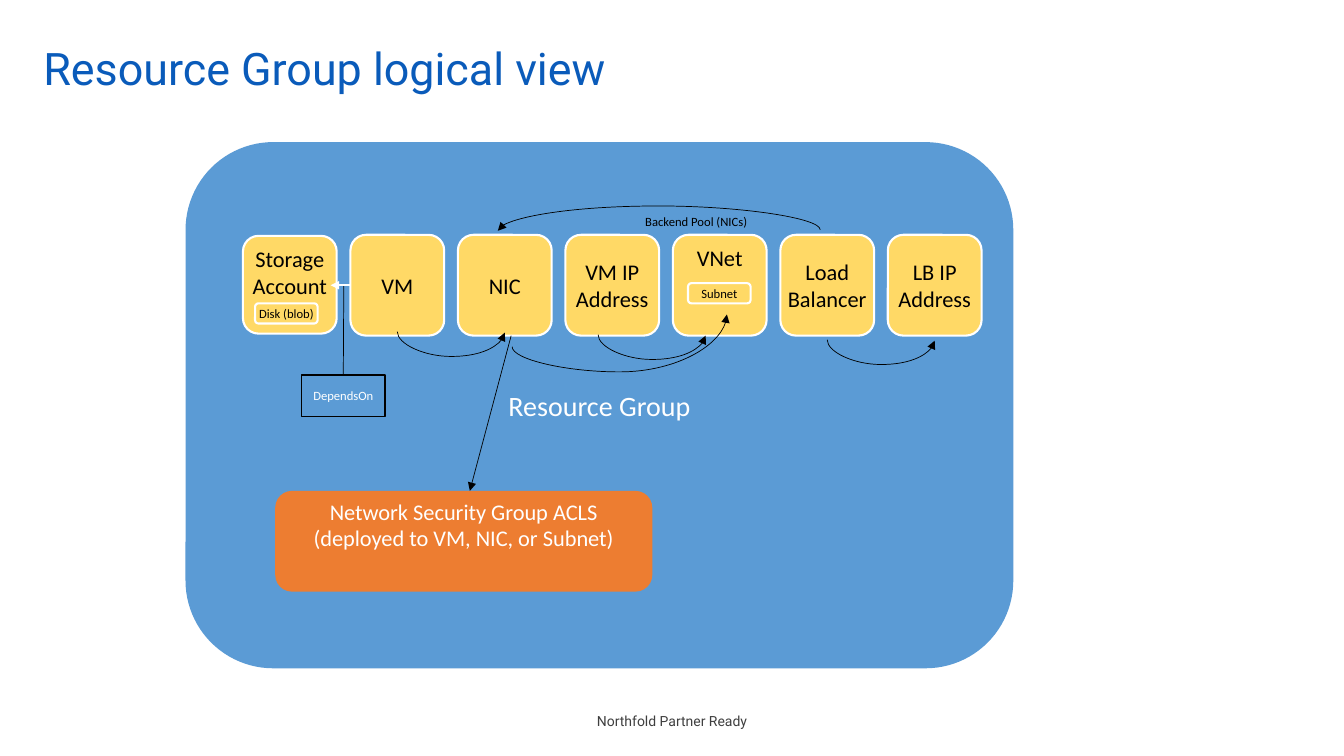
"""Build a slide that shows the resources of a resource group and their links."""
from lxml import etree
from pptx import Presentation
from pptx import util as u
from pptx.dml import color
from pptx.enum import shapes, text
from pptx.oxml import ns

WIDTH, HEIGHT = 13.33, 7.5
CARD_LEFT, CARD_TOP, CARD_PITCH = 2.41, 2.33, 1.066
CARD_WIDTH, CARD_HEIGHT = 0.93, 1.0
CARD_BOTTOM = CARD_TOP + CARD_HEIGHT
CARD_MIDDLE = CARD_TOP + CARD_HEIGHT / 2
BEND = 0.25
CARDS = ["Storage Account", "VM", "NIC", "VM IP Address", "VNet",
         "Load Balancer", "LB IP Address"]
STORAGE, VM, NIC, VM_IP, VNET, BALANCER, LB_IP = range(len(CARDS))
BLUE, YELLOW, ORANGE = "5B9BD5", "FFD966", "ED7D31"
WHITE, BLACK = "FFFFFF", "000000"


def rgb(value):
    """Turn a hex string into a colour."""
    return color.RGBColor.from_string(value)


def column(index):
    """Give the left edge of a card column."""
    return CARD_LEFT + index * CARD_PITCH


def center(index):
    """Give the horizontal middle of a card column."""
    return column(index) + CARD_WIDTH / 2


def write(shape, lines, size, ink, font="Calibri", insets=(0, 0.05, 0, 0.05),
          align=text.PP_ALIGN.CENTER, anchor=text.MSO_ANCHOR.MIDDLE, spacing=None):
    """Fill a shape with lines of text in one style."""
    frame = shape.text_frame
    frame.text = "\n".join(lines)
    frame.word_wrap = True
    frame.auto_size = text.MSO_AUTO_SIZE.NONE
    frame.vertical_anchor = anchor
    frame.margin_left, frame.margin_top, frame.margin_right, frame.margin_bottom = map(
        u.Inches, insets)
    for paragraph in frame.paragraphs:
        paragraph.alignment = align
        paragraph.line_spacing = spacing
        paragraph.font.size = u.Pt(size)
        paragraph.font.name = font
        paragraph.font.color.rgb = rgb(ink)


def add_box(slide, place, lines, size, fill, ink, border=None, weight=1.5,
            kind=shapes.MSO_SHAPE.ROUNDED_RECTANGLE, **style):
    """Add a filled shape with text."""
    shape = slide.shapes.add_shape(kind, *map(u.Inches, place))
    shape.shadow.inherit = False
    shape.fill.solid()
    shape.fill.fore_color.rgb = rgb(fill)
    if border:
        shape.line.color.rgb = rgb(border)
        shape.line.width = u.Pt(weight)
    else:
        shape.line.fill.background()
    write(shape, lines, size, ink, **style)
    return shape


def add_card(slide, index, anchor=text.MSO_ANCHOR.MIDDLE):
    """Add the card of one resource."""
    place = (column(index), CARD_TOP, CARD_WIDTH, CARD_HEIGHT)
    return add_box(slide, place, [CARDS[index]], 16, YELLOW, BLACK, WHITE, anchor=anchor)


def add_tag(slide, left, top, label):
    """Add a small label inside a card."""
    add_box(slide, (left, top, 0.62, 0.2), [label], 9, YELLOW, BLACK, WHITE)


def add_label(slide, place, label, size, ink, **style):
    """Add a text box."""
    write(slide.shapes.add_textbox(*map(u.Inches, place)), [label], size, ink, **style)


def add_line(slide, start, end, ink=BLACK, weight=0.5, arrow=None,
             kind=shapes.MSO_CONNECTOR.STRAIGHT):
    """Add a connector, with an arrow at its head or tail if asked."""
    connector = slide.shapes.add_connector(kind, *map(u.Inches, start + end))
    connector.line.color.rgb = rgb(ink)
    connector.line.width = u.Pt(weight)
    if arrow:
        line = connector.line._get_or_add_ln()
        etree.SubElement(line, ns.qn(f"a:{arrow}End"), type="triangle")
    etree.SubElement(connector._element.spPr, ns.qn("a:effectLst"))
    return connector


def add_arc(slide, start, end, bend=BEND, arrow="tail"):
    """Add a U-shaped curve from left to right; a positive bend hangs down."""
    across, down = end[0] - start[0], end[1] - start[1]
    middle_x, middle_y = (start[0] + end[0]) / 2, (start[1] + end[1]) / 2
    half_width, half_height = abs(down) / 2, across / 2
    connector = add_line(slide, (middle_x - half_width, middle_y - half_height),
                         (middle_x + half_width, middle_y + half_height),
                         arrow=arrow, kind=shapes.MSO_CONNECTOR.CURVE)
    properties = connector._element.spPr
    transform = properties.find(ns.qn("a:xfrm"))
    transform.set("rot", str((270 if down > 0 else 90) * 60000))
    transform.set("flipH", "1")
    transform.set("flipV", "0" if down > 0 else "1")
    geometry = properties.find(ns.qn("a:prstGeom"))
    adjustments = geometry.find(ns.qn("a:avLst"))
    if adjustments is None:
        adjustments = etree.SubElement(geometry, ns.qn("a:avLst"))
    etree.SubElement(adjustments, ns.qn("a:gd"), name="adj1",
                     fmla=f"val {round(bend / down * 100000)}")


def add_title(slide, label):
    """Place and format the title."""
    title = slide.shapes.title
    title.left, title.top, title.width, title.height = map(
        u.Inches, (0.33, 0.33, WIDTH - 1, HEIGHT / 10))
    write(title, [label], 32, "0A5BBA", font="Roboto", insets=(0.1, 0.05, 0.1, 0.05),
          align=text.PP_ALIGN.LEFT, spacing=0.9)


def add_links(slide, virtual_machine, depends_on):
    """Draw the links between the resources."""
    depends_line = add_line(slide, (3.41, 3.72), (3.41, CARD_MIDDLE))
    depends_line.begin_connect(depends_on, 0)
    storage_line = add_line(slide, (3.28, CARD_MIDDLE), (column(VM), CARD_MIDDLE),
                            WHITE, 1.5, "head")
    storage_line.end_connect(virtual_machine, 1)
    add_line(slide, (5.07, CARD_BOTTOM), (4.66, 4.87), arrow="tail")
    for source, target, shift, top in ((VM, NIC, 0, 3.29), (VM_IP, VNET, -0.14, 3.32),
                                       (BALANCER, LB_IP, 0, 3.37)):
        add_arc(slide, (center(source) + shift, top), (center(target) + shift, top + 0.01))
    add_arc(slide, (5.08, 3.44), (7.21, 3.12))
    add_arc(slide, (center(NIC) - 0.07, 2.29), (center(BALANCER) - 0.07, 2.28),
            -BEND, "head")


def main():
    """Build and save the slide."""
    presentation = Presentation()
    presentation.slide_width, presentation.slide_height = u.Inches(WIDTH), u.Inches(HEIGHT)
    slide = presentation.slides.add_slide(presentation.slide_layouts[5])
    add_title(slide, "Resource Group logical view")
    add_label(slide, (5.11, 6.95, 3.11, 0.4), "Northfold Partner Ready", 10, "3F3F3F",
              font="Roboto", insets=(0.2, 0.05, 0.2, 0.05))
    add_box(slide, (1.84, 1.41, 8.21, 5.22), ["Resource Group"], 20, BLUE, WHITE)
    cards = [add_card(slide, index, text.MSO_ANCHOR.TOP if index in (STORAGE, VNET)
                      else text.MSO_ANCHOR.MIDDLE) for index in range(len(CARDS))]
    cards[STORAGE].top, cards[STORAGE].height = u.Inches(2.34), u.Inches(0.97)
    add_tag(slide, column(STORAGE) + 0.12, 3.01, "Disk (blob)")
    add_tag(slide, column(VNET) + 0.15, 2.81, "Subnet")
    depends_on = add_box(slide, (2.99, 3.72, 0.83, 0.41), ["DependsOn"], 9, BLUE, WHITE,
                         BLACK, 1, shapes.MSO_SHAPE.RECTANGLE)
    add_box(slide, (2.73, 4.87, 3.74, 1),
            ["Network Security Group ACLS", "(deployed to VM, NIC, or Subnet)"],
            16, ORANGE, WHITE, insets=(0, 0.05, 0, 0.38))
    add_links(slide, cards[VM], depends_on)
    add_label(slide, (6.2, 1.98, 1.53, 0.46), "Backend Pool (NICs)", 9, BLACK,
              insets=(0.2, 0.16, 0.2, 0.16), align=text.PP_ALIGN.LEFT,
              anchor=text.MSO_ANCHOR.TOP, spacing=0.9)
    presentation.save("out.pptx")


if __name__ == "__main__":
    main()
